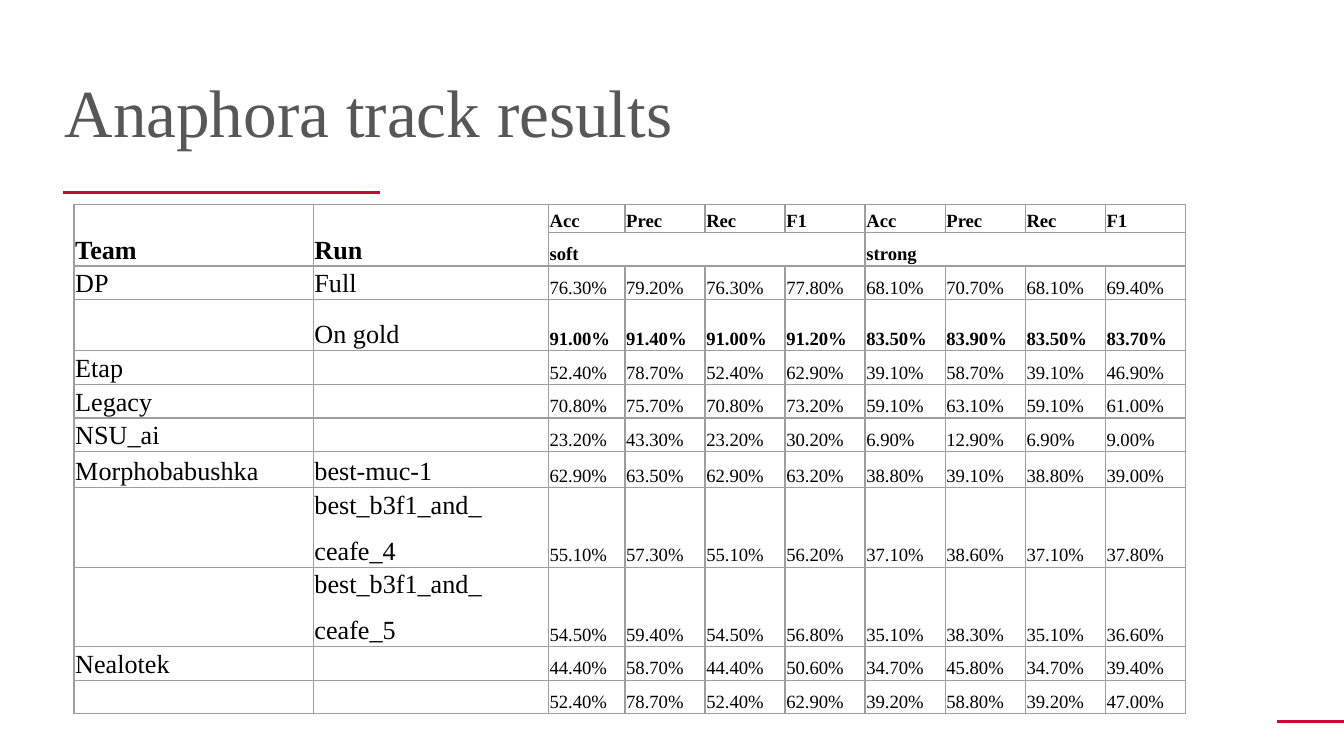
from lxml import etree
from pptx import Presentation
from pptx import util as u
from pptx.dml.color import RGBColor
from pptx.enum import shapes, text
from pptx.oxml import ns

CRIMSON = RGBColor(0xC6, 0x0C, 0x30)
TITLE_GREY = RGBColor(0x57, 0x57, 0x57)
BORDER_GREY = RGBColor(0x9E, 0x9E, 0x9E)
BLACK = RGBColor(0, 0, 0)
FONT = "Times New Roman"

WIDTH = 10
HEIGHT = WIDTH * 9 / 16
NAME_COLUMNS = [1.78, 1.75, 0.57]
ROW_HEIGHTS = [0.21, 0.25, 0.25, 0.38, 0.25, 0.25, 0.25, 0.27, 0.48, 0.48, 0.25, 0.25]
METRICS = ["Acc", "Prec", "Rec", "F1"]
HEADER_ROWS = 2
GOLD_ROW = 3
RESULTS = [
    ("DP", "Full", "76.30 79.20 76.30 77.80 68.10 70.70 68.10 69.40"),
    ("", "On gold", "91.00 91.40 91.00 91.20 83.50 83.90 83.50 83.70"),
    ("Etap", "", "52.40 78.70 52.40 62.90 39.10 58.70 39.10 46.90"),
    ("Legacy", "", "70.80 75.70 70.80 73.20 59.10 63.10 59.10 61.00"),
    ("NSU_ai", "", "23.20 43.30 23.20 30.20 6.90 12.90 6.90 9.00"),
    ("Morphobabushka", "best-muc-1", "62.90 63.50 62.90 63.20 38.80 39.10 38.80 39.00"),
    ("", "best_b3f1_and_\nceafe_4", "55.10 57.30 55.10 56.20 37.10 38.60 37.10 37.80"),
    ("", "best_b3f1_and_\nceafe_5", "54.50 59.40 54.50 56.80 35.10 38.30 35.10 36.60"),
    ("Nealotek", "", "44.40 58.70 44.40 50.60 34.70 45.80 34.70 39.40"),
    ("", "", "52.40 78.70 52.40 62.90 39.20 58.80 39.20 47.00"),
]


def set_font(paragraph, size, color, bold=False):
    font = paragraph.font
    font.name, font.size, font.bold = FONT, u.Pt(size), bold
    font.color.rgb = color


def add_rule(slide, left, right, top):
    rule = slide.shapes.add_connector(
        shapes.MSO_CONNECTOR.STRAIGHT,
        u.Inches(left), u.Inches(top), u.Inches(right), u.Inches(top))
    rule.line.color.rgb = CRIMSON
    rule.line.width = u.Pt(1.5)
    etree.SubElement(rule._element.spPr, ns.qn("a:effectLst"))


def place_title(slide, left, top, width, height):
    title = slide.shapes.title
    title.left, title.top, title.width, title.height = map(
        u.Inches, (left, top, width, height))
    frame = title.text_frame
    frame.text = "Anaphora track results"
    frame.word_wrap = True
    frame.auto_size = text.MSO_AUTO_SIZE.NONE
    frame.vertical_anchor = text.MSO_ANCHOR.MIDDLE
    frame.margin_left = frame.margin_right = 0
    frame.margin_top = frame.margin_bottom = u.Inches(0.04)
    paragraph = frame.paragraphs[0]
    paragraph.alignment = text.PP_ALIGN.LEFT
    set_font(paragraph, 36, TITLE_GREY)


def add_borders(cell):
    properties = cell._tc.get_or_add_tcPr()
    for position, side in enumerate(("lnL", "lnR", "lnT", "lnB")):
        line = etree.Element(ns.qn(f"a:{side}"), w=str(u.Pt(0.75)))
        fill = etree.SubElement(line, ns.qn("a:solidFill"))
        etree.SubElement(fill, ns.qn("a:srgbClr"), val=str(BORDER_GREY))
        properties.insert(position, line)


def format_cell(cell, size, bold):
    cell.fill.background()
    cell.vertical_anchor = text.MSO_ANCHOR.BOTTOM
    cell.margin_left = cell.margin_right = u.Inches(0.01)
    cell.margin_top = cell.margin_bottom = u.Inches(0.01)
    for paragraph in cell.text_frame.paragraphs:
        paragraph.line_spacing = 1.07
        paragraph.space_after = u.Pt(8)
        set_font(paragraph, size, BLACK, bold)
    add_borders(cell)


def place_results(slide, left, top, width):
    header = ["Team", "Run"] + METRICS * 2
    groups = ["", "", "soft", "", "", "", "strong", "", "", ""]
    rows = [header, groups] + [
        [team, run] + [f"{score}%" for score in scores.split()]
        for team, run, scores in RESULTS]
    table = slide.shapes.add_table(
        len(rows), len(header), u.Inches(left), u.Inches(top),
        u.Inches(width), u.Inches(sum(ROW_HEIGHTS))).table
    table.first_row = table.horz_banding = False

    equal_count = len(header) - len(NAME_COLUMNS)
    equal_width = (width - sum(NAME_COLUMNS)) / equal_count
    for column, size in zip(table.columns, NAME_COLUMNS + [equal_width] * equal_count):
        column.width = u.Inches(size)
    for row, size in zip(table.rows, ROW_HEIGHTS):
        row.height = u.Inches(size)

    for row_index, values in enumerate(rows):
        for column_index, value in enumerate(values):
            cell = table.cell(row_index, column_index)
            cell.text = value
            is_name = column_index < 2 and value
            is_bold = row_index < HEADER_ROWS or (
                row_index == GOLD_ROW and column_index >= 2)
            format_cell(cell, 14 if is_name else 10, is_bold)

    for column in (0, 1):
        table.cell(0, column).merge(table.cell(1, column))
    for first in (2, 6):
        table.cell(1, first).merge(table.cell(1, first + len(METRICS) - 1))


def build_results_slide(presentation):
    slide = presentation.slides.add_slide(presentation.slide_layouts[5])
    add_rule(slide, 0.95 * WIDTH, WIDTH, 5.37)
    add_rule(slide, 0.47, 2.83, 1.43)
    place_title(slide, 0.48, 0.23, 8.27, 1.18)
    place_results(slide, 0.55, 1.52, 8.27)


def main():
    presentation = Presentation()
    presentation.slide_width = u.Inches(WIDTH)
    presentation.slide_height = u.Inches(HEIGHT)
    build_results_slide(presentation)
    presentation.save("out.pptx")


if __name__ == "__main__":
    main()
